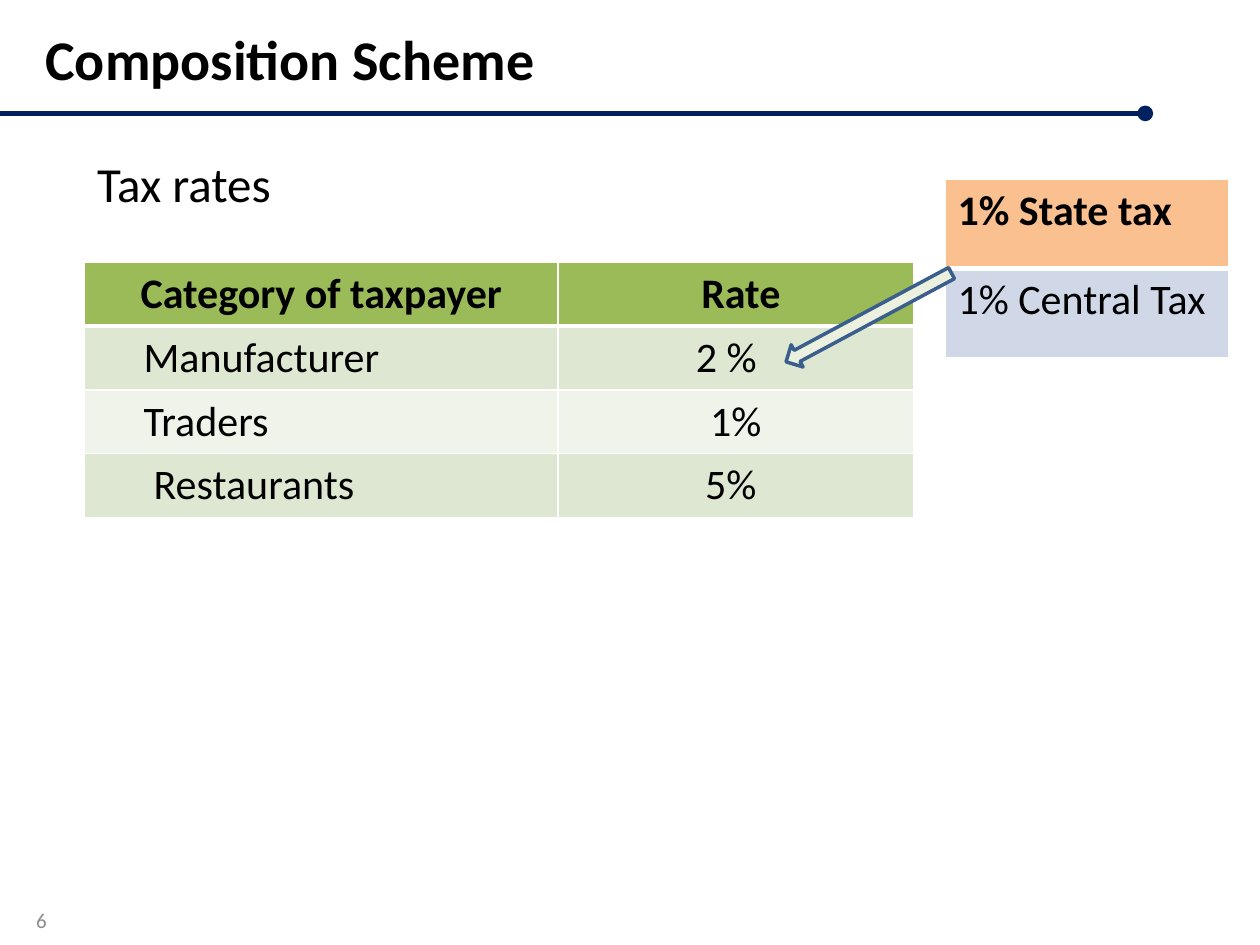
from dataclasses import dataclass

from lxml.etree import SubElement
from pptx import Presentation
from pptx.dml.color import RGBColor
from pptx.enum.shapes import MSO_CONNECTOR, MSO_SHAPE
from pptx.enum.text import MSO_ANCHOR, PP_ALIGN
from pptx.oxml.ns import qn
from pptx.slide import Slide
from pptx.text.text import TextFrame
from pptx.util import Inches, Pt


@dataclass(frozen=True)
class Theme:
    font: str = "Calibri"
    title_size: int = 32
    body_size: int = 28
    table_size: int = 24
    number_size: int = 12
    black: str = "000000"
    white: str = "FFFFFF"
    gray: str = "8C8C8C"
    navy: str = "002060"
    green: str = "9BBB59"
    band_dark: str = "DEE7D1"
    band_light: str = "EFF3EA"
    orange: str = "FAC090"
    blue: str = "D0D8E8"
    arrow_fill: str = "EBF1DE"
    arrow_line: str = "3A5F8C"


@dataclass(frozen=True)
class Cell:
    text: str
    fill: str
    bold: bool = False
    align: PP_ALIGN = PP_ALIGN.LEFT
    left_margin: float = 0.1
    right_margin: float = 0.1


THEME = Theme()
CENTER = PP_ALIGN.CENTER


def write(frame: TextFrame, text: str, size: int, color: str = THEME.black,
          bold: bool = False, align: PP_ALIGN = PP_ALIGN.LEFT) -> None:
    frame.text = text
    para = frame.paragraphs[0]
    para.alignment = align
    for span in para.runs:
        span.font.name = THEME.font
        span.font.size = Pt(size)
        span.font.bold = bold
        span.font.color.rgb = RGBColor.from_string(color)


def place(box, left: float, top: float, width: float, height: float) -> None:
    box.left, box.top = Inches(left), Inches(top)
    box.width, box.height = Inches(width), Inches(height)


def add_borders(cell, bottom: int) -> None:
    properties = cell._tc.get_or_add_tcPr()
    for side, points in (("L", 1), ("R", 1), ("T", 1), ("B", bottom)):
        line = SubElement(properties, qn(f"a:ln{side}"), w=str(Pt(points)))
        fill = SubElement(line, qn("a:solidFill"))
        SubElement(fill, qn("a:srgbClr"), val=THEME.white)


def draw_table(page: Slide, left: float, top: float, widths: list[float],
               row_height: float, rows: list[list[Cell]]) -> None:
    table = page.shapes.add_table(
        len(rows), len(widths), Inches(left), Inches(top),
        Inches(sum(widths)), Inches(row_height * len(rows))).table
    table.horz_banding = False
    for column, width in zip(table.columns, widths):
        column.width = Inches(width)
    for row_index, row in enumerate(rows):
        for column_index, item in enumerate(row):
            cell = table.cell(row_index, column_index)
            # The header row has a thicker rule below it
            add_borders(cell, bottom=3 if row_index == 0 else 1)
            cell.fill.solid()
            cell.fill.fore_color.rgb = RGBColor.from_string(item.fill)
            cell.margin_left = Inches(item.left_margin)
            cell.margin_right = Inches(item.right_margin)
            write(cell.text_frame, item.text, THEME.table_size,
                  bold=item.bold, align=item.align)


def draw_title_rule(page: Slide) -> None:
    rule = page.shapes.add_connector(
        MSO_CONNECTOR.STRAIGHT, 0, Inches(0.9), Inches(9.09), Inches(0.9))
    rule.line.color.rgb = RGBColor.from_string(THEME.navy)
    rule.line.width = Pt(3)
    SubElement(rule.line._get_or_add_ln(), qn("a:tailEnd"), type="oval")
    SubElement(rule._element.spPr, qn("a:effectLst"))


def draw_arrow(page: Slide) -> None:
    arrow = page.shapes.add_shape(MSO_SHAPE.LEFT_ARROW, Inches(6.15),
                                  Inches(2.42), Inches(1.49), Inches(0.2))
    arrow.rotation = 331.8
    arrow.shadow.inherit = False
    arrow.fill.solid()
    arrow.fill.fore_color.rgb = RGBColor.from_string(THEME.arrow_fill)
    arrow.line.color.rgb = RGBColor.from_string(THEME.arrow_line)
    arrow.line.width = Pt(2)


def main() -> None:
    deck = Presentation()
    deck.slide_width, deck.slide_height = Inches(10), Inches(7.5)
    page = deck.slides.add_slide(deck.slide_layouts[1])

    # Title and rule
    draw_title_rule(page)
    title = page.shapes.title
    place(title, 0.26, 0.14, 8.22, 0.64)
    title.text_frame.vertical_anchor = MSO_ANCHOR.MIDDLE
    write(title.text_frame, "Composition Scheme", THEME.title_size, bold=True)

    # Body heading, without a bullet
    body = page.placeholders[1]
    place(body, 0.67, 1.17, 9.33, 5.83)
    write(body.text_frame, "Tax rates", THEME.body_size)
    para = body.text_frame.paragraphs[0]
    para.space_before = Pt(0)
    properties = para._p.get_or_add_pPr()
    properties.set("marL", "0")
    properties.set("indent", "0")
    SubElement(properties, qn("a:buNone"))

    # Rates by taxpayer, and the split of the manufacturer's rate
    dark, light = THEME.band_dark, THEME.band_light
    draw_table(page, 0.67, 2.08, [3.76, 2.82], 0.5, [
        [Cell("Category of taxpayer", THEME.green, True, CENTER),
         Cell("Rate", THEME.green, True, CENTER, left_margin=0.18)],
        [Cell("Manufacturer", dark, left_margin=0.47),
         Cell("2 %", dark, align=CENTER, right_margin=0.25)],
        [Cell("Traders", light, left_margin=0.47),
         Cell("1%", light, align=CENTER)],
        [Cell("Restaurants", dark, left_margin=0.55),
         Cell("5%", dark, align=CENTER, right_margin=0.18)],
    ])
    draw_table(page, 7.5, 1.42, [2.25], 0.71, [
        [Cell("1% State tax", THEME.orange, True)],
        [Cell("1% Central Tax", THEME.blue)],
    ])
    draw_arrow(page)

    # Page number
    number = page.shapes.add_textbox(0, Inches(7.1), Inches(0.47), Inches(0.4))
    number.text_frame.word_wrap = True
    number.text_frame.vertical_anchor = MSO_ANCHOR.MIDDLE
    write(number.text_frame, "6", THEME.number_size, THEME.gray,
          align=PP_ALIGN.RIGHT)

    deck.save("out.pptx")


if __name__ == "__main__":
    main()
